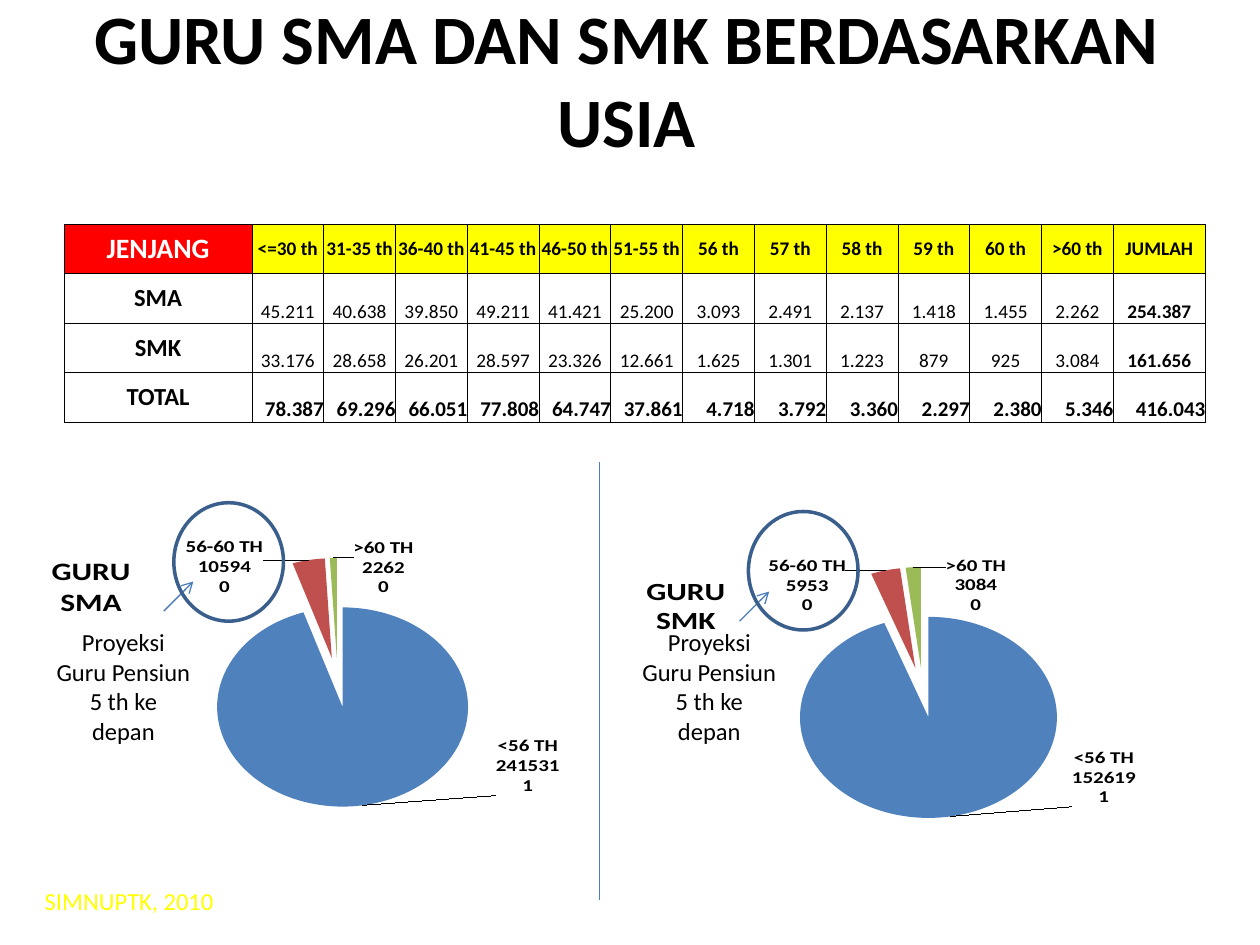
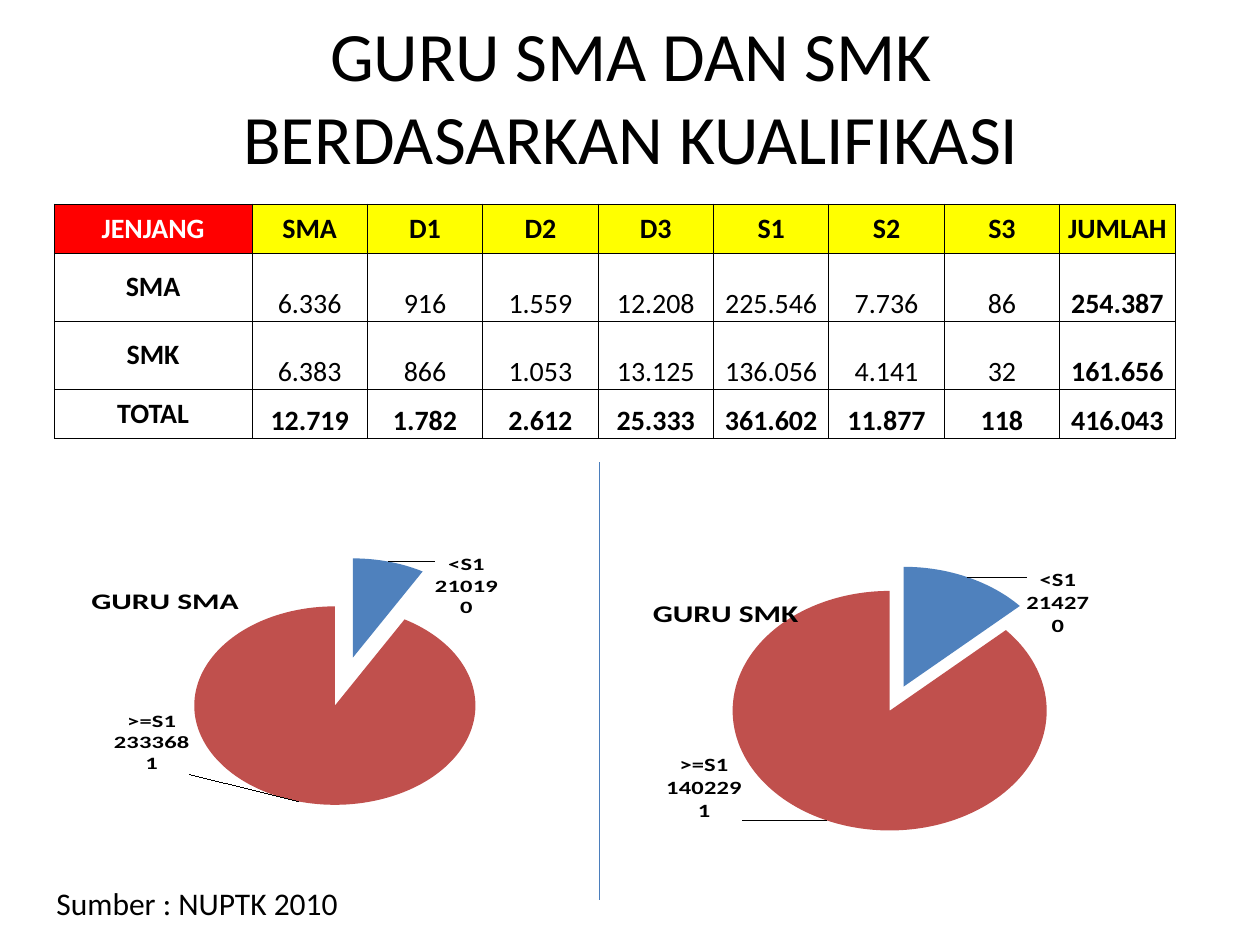
from copy import deepcopy
from lxml.etree import SubElement as Sub
from pptx import Presentation
from pptx.chart.data import CategoryChartData as Data
from pptx.dml.color import RGBColor
from pptx.enum.chart import XL_CHART_TYPE as Kind, XL_LABEL_POSITION as Spot
from pptx.enum.shapes import MSO_CONNECTOR as Wire, MSO_SHAPE as Form
from pptx.enum.text import MSO_ANCHOR as Anchor, PP_ALIGN as Align
from pptx.oxml import parse_xml
from pptx.oxml.ns import nsdecls, qn
from pptx.util import Inches, Pt

FONT = "Calibri"
BLACK, WHITE, RED, YELLOW = "000000", "FFFFFF", "FF0000", "FFFF00"
LINE, RING = "4B7EBC", "3A5F8C"
SLICES = ["4F81BD", "C0504D", "9BBB59"]
MID, LOW = Anchor.MIDDLE, Anchor.BOTTOM


def paint(color):
    """Turn a hex string into a colour."""
    return RGBColor.from_string(color)


def unit(count):
    """Turn grid columns or rows, a hundred across the slide, into a length."""
    return Inches(count / 10)


def units(box):
    """Turn a box of grid counts into lengths."""
    return [unit(n) for n in box]


def style(font, size, color=BLACK, bold=False):
    """Set the face, size, colour and weight of a font."""
    font.name, font.size, font.bold = FONT, Pt(size), bold
    font.color.rgb = paint(color)


def write(frame, text, size, align=Align.CENTER, **look):
    """Fill a text frame with lines of one format."""
    frame.text = text
    for para in frame.paragraphs:
        para.alignment = align
        for run in para.runs:
            style(run.font, size, **look)


def layout(**parts):
    """Make a manual chart layout."""
    node = parse_xml(f"<c:layout {nsdecls('c')}><c:manualLayout/></c:layout>")
    for key, val in parts.items():
        Sub(node[0], qn("c:" + key), val=str(val))
    return node


def put(home, node, index):
    """Give a chart part a layout in place of any it has."""
    for old in home.findall(qn("c:layout")):
        home.remove(old)
    home.insert(index, node)


def border(cell):
    """Draw a thin black line on each side of a cell."""
    props = cell._tc.get_or_add_tcPr()
    for i, side in enumerate("LRTB"):
        props.insert(i, parse_xml(
            f'<a:ln{side} {nsdecls("a")} w="6350"><a:solidFill>'
            f'<a:srgbClr val="{BLACK}"/></a:solidFill></a:ln{side}>'))


class Deck:
    """Hold the style and the current slide."""

    def __init__(self):
        """Open an empty deck."""
        self.file = Presentation()
        self.file.slide_width, self.file.slide_height = unit(100), unit(75)

    def page(self, title, box, bold):
        """Start a slide with its title and the line between its halves."""
        self.slide = self.file.slides.add_slide(self.file.slide_layouts[6])
        self.shapes = self.slide.shapes
        self.text(title, box, 39.6, anchor=MID, bold=bold)
        self.wire(47.6, 36.7, 47.6, 71.4)

    def text(self, text, box, size, anchor=Anchor.TOP, wrap=True, **look):
        """Add a text box."""
        frame = self.shapes.add_textbox(*units(box)).text_frame
        frame.word_wrap, frame.vertical_anchor = wrap, anchor
        write(frame, text, size, **look)

    def wire(self, *ends, arrow=False):
        """Add a straight line, with an arrowhead on demand."""
        wire = self.shapes.add_connector(Wire.STRAIGHT, *units(ends))
        wire.line.color.rgb, wire.line.width = paint(LINE), Pt(0.75)
        if arrow:
            Sub(wire.line._get_or_add_ln(), qn("a:tailEnd"), type="arrow")
        Sub(wire._element.spPr, qn("a:effectLst"))

    def ring(self, box):
        """Add a hollow ellipse."""
        ring = self.shapes.add_shape(Form.OVAL, *units(box))
        ring.shadow.inherit = False
        ring.fill.background()
        ring.line.color.rgb, ring.line.width = paint(RING), Pt(2)

    def table(self, left, top, cols, rows, data, names, head, body, foot, end):
        """Add a table with a header, two data rows and a total row."""
        box = units((left, top, sum(cols), sum(rows)))
        table = self.shapes.add_table(len(rows), len(cols), *box).table
        table.first_row = table.horz_banding = False
        for col, width in zip(table.columns, cols):
            col.width = unit(width)
        last = len(cols) - 1
        for r, line in enumerate(data):
            table.rows[r].height = unit(rows[r])
            for c, word in enumerate(line):
                cell = table.cell(r, c)
                cell.margin_left = cell.margin_right = 0
                cell.margin_top = cell.margin_bottom = 0
                cell.vertical_anchor = LOW if r and c else MID
                total = r == 3 and c > 0
                size = (16 if r == 0 else names) if c == 0 else (head, body, body, foot)[r]
                bold = r in (0, 3) or c in (0, last)
                write(cell.text_frame, word, size, bold=bold,
                      color=BLACK if r or c else WHITE,
                      align=end if total else Align.CENTER)
                border(cell)
                if r:
                    cell.fill.background()
                else:
                    cell.fill.solid()
                    cell.fill.fore_color.rgb = paint(YELLOW if c else RED)

    def pie(self, box, title, spot, plot, cats, vals, size, gap, shifts):
        """Add a pie with its title and its moved labels."""
        data = Data()
        data.categories = cats
        data.add_series("Series 1", vals)
        chart = self.shapes.add_chart(Kind.PIE, *units(box), data).chart
        style(chart.font, 10)
        chart.has_legend = False
        write(chart.chart_title.text_frame, title, 18, bold=True)
        put(chart.chart_title._element, layout(
            xMode="edge", yMode="edge", x=spot[0], y=spot[1]), 1)
        put(chart._chartSpace.chart.plotArea, layout(
            layoutTarget="inner", xMode="edge", yMode="edge",
            **dict(zip("xywh", plot))), 0)
        chart.plots[0].vary_by_categories = True
        series = chart.plots[0].series[0]
        for i in range(len(cats)):
            fill = series.points[i].format.fill
            fill.solid()
            fill.fore_color.rgb = paint(SLICES[i])
        burst = parse_xml(f'<c:explosion {nsdecls("c")} val="{gap}"/>')
        series._element.find(qn("c:dPt")).addprevious(burst)
        for point in series._element.findall(qn("c:dPt")):
            point.find(qn("c:spPr")).addprevious(deepcopy(burst))
        self.tags(series.data_labels, size, shifts)

    def tags(self, tags, size, shifts):
        """Show name, value and share, each label moved by its shift."""
        style(tags.font, size, bold=True)
        tags.number_format, tags.number_format_is_linked = "#,##0", False
        tags.show_value = tags.show_category_name = tags.show_percentage = True
        tags.position = Spot.OUTSIDE_END
        root = tags._element
        split = parse_xml(f"<c:separator {nsdecls('c')}>\n</c:separator>")
        root.find(qn("c:showBubbleSize")).addnext(split)
        parts = [p for p in root if p.tag != qn("c:showLeaderLines")]
        for i, (x, y) in enumerate(shifts):
            tag = parse_xml(f'<c:dLbl {nsdecls("c")}><c:idx val="{i}"/></c:dLbl>')
            tag.append(layout(x=x, y=y))
            tag.extend(deepcopy(p) for p in parts)
            root.insert(i, tag)


def age(deck):
    """Build the slide on age."""
    deck.page("GURU SMA DAN SMK BERDASARKAN USIA", (2, 2.1, 95.5, 8.3), True)
    head = ("JENJANG,<=30 th,31-35 th,36-40 th,41-45 th,46-50 th,51-55 th,"
            "56 th,57 th,58 th,59 th,60 th,>60 th,JUMLAH").split(",")
    rows = [
        "SMA 45.211 40.638 39.850 49.211 41.421 25.200 3.093 2.491 2.137 1.418 1.455 2.262 254.387",
        "SMK 33.176 28.658 26.201 28.597 23.326 12.661 1.625 1.301 1.223 879 925 3.084 161.656",
        "TOTAL 78.387 69.296 66.051 77.808 64.747 37.861 4.718 3.792 3.360 2.297 2.380 5.346 416.043"]
    deck.table(5.1, 17.8, [14.9] + [5.7] * 12 + [7.3], [3.93] * 4,
               [head] + [row.split() for row in rows],
               names=14, head=11, body=11, foot=12, end=Align.RIGHT)
    cats = ["<56 TH", "56-60 TH", ">60 TH"]
    deck.pie((2.8, 39.1, 50, 30), "GURU\nSMA", (0.02, 0.1), (0.23, 0.12, 0.5, 0.83),
             cats, (241531, 10594, 2262), 12, 25,
             [(0.21, -0.25), (-0.07, 0.14), (0.08, 0.15)])
    deck.pie((50, 39.9, 50, 30), "GURU\nSMK", (0.02, 0.11), (0.21, 0.09, 0.51, 0.86),
             cats, (152619, 5953, 3084), 12, 25,
             [(0.19, -0.25), (-0.06, 0.17), (0.1, 0.18)])
    for note, tail, ring in ((3.5, (13, 48.5), (13.8, 39.9)),
                             (50, (58.7, 49.3), (59.4, 40.6))):
        deck.text("Proyeksi Guru Pensiun 5 th ke depan", (note, 49.3, 12.6, 10.4), 14)
        deck.wire(*tail, tail[0] + 2.35, tail[1] - 2.35, arrow=True)
        deck.ring((*ring, 8.7, 9.4))
    deck.text("SIMNUPTK, 2010", (2, 69.8, 16.5, 3.4), 14, color=YELLOW)


def grade(deck):
    """Build the slide on qualification."""
    deck.page("GURU SMA DAN SMK\nBERDASARKAN KUALIFIKASI", (5.1, 1.3, 90, 12.5), False)
    rows = ["JENJANG SMA D1 D2 D3 S1 S2 S3 JUMLAH",
            "SMA 6.336 916 1.559 12.208 225.546 7.736 86 254.387",
            "SMK 6.383 866 1.053 13.125 136.056 4.141 32 161.656",
            "TOTAL 12.719 1.782 2.612 25.333 361.602 11.877 118 416.043"]
    deck.table(4.3, 16.2, [15.7] + [9.16] * 8, [3.9, 5.4, 5.4, 3.9],
               [row.split() for row in rows],
               names=16, head=16, body=16, foot=16, end=Align.CENTER)
    cats = ["<S1", ">=S1"]
    deck.pie((2.8, 39.1, 50, 30), "GURU SMA", (0.08, 0.16), (0.2, 0.07, 0.58, 0.93),
             cats, (21019, 233368), 14, 25, [(0.07, 0.23), (-0.17, -0.36)])
    deck.pie((48.4, 39.9, 49.5, 31.1), "GURU SMK", (0.06, 0.15), (0.18, 0.06, 0.56, 0.89),
             cats, (21427, 140229), 14, 11, [(0.09, 0.22), (-0.13, -0.24)])
    deck.text("Sumber : NUPTK 2010", (3.5, 69.7, 24.6, 4), 18,
              wrap=False, align=Align.LEFT)


def main():
    """Build and save the deck."""
    deck = Deck()
    age(deck)
    grade(deck)
    deck.file.save("out.pptx")


if __name__ == "__main__":
    main()
